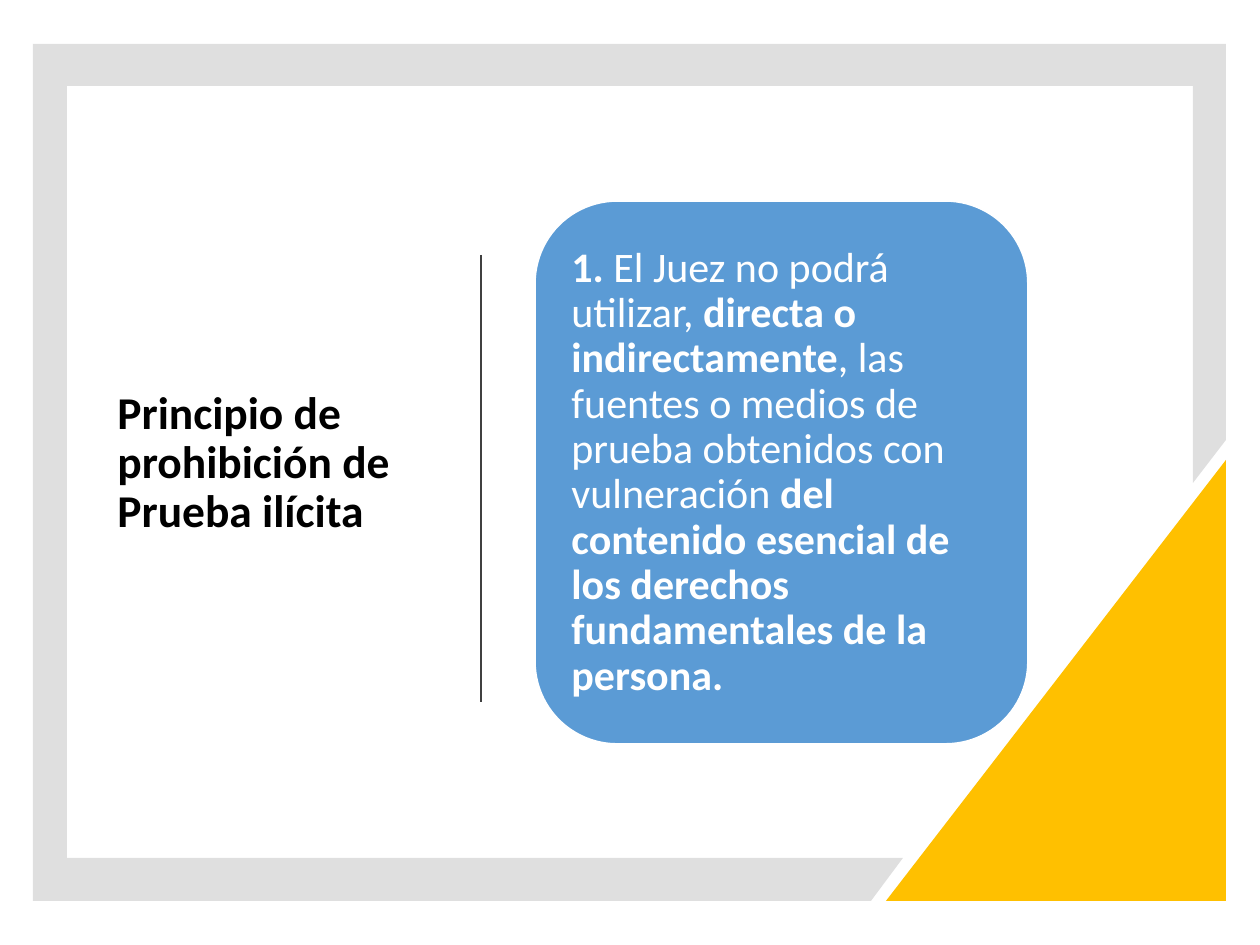
from dataclasses import dataclass

from lxml.etree import SubElement as Sub
from pptx import Presentation as Deck
from pptx.dml.color import RGBColor as Rgb
from pptx.enum.shapes import MSO_CONNECTOR as Link, MSO_SHAPE as Kind
from pptx.enum.text import MSO_ANCHOR as Anchor, PP_ALIGN as Align
from pptx.oxml.ns import qn
from pptx.util import Emu, Pt

UNIT = 914400 / 126


@dataclass(frozen=True)
class Theme:
    font: str = "Calibri"
    head: int = 26
    body: int = 24
    ink: str = "000000"
    paper: str = "FFFFFF"
    grey: str = "808080"
    rule: str = "404040"
    gold: str = "FFC000"
    blue: str = "5B9BD5"


def px(*vals):
    return [Emu(round(v * UNIT)) for v in vals]


class Page:
    def __init__(self, slide, theme):
        self.shapes = slide.shapes
        self.theme = theme

    def paint(self, shape, fill, edge=None):
        shape.shadow.inherit = False
        shape.fill.solid()
        shape.fill.fore_color.rgb = Rgb.from_string(fill)
        if edge:
            shape.line.color.rgb = Rgb.from_string(edge)
            shape.line.width = Pt(1)
        else:
            shape.line.fill.background()

    def frame(self, points, fill, alpha):
        start, *rest = points
        pen = self.shapes.build_freeform(*start, scale=UNIT)
        pen.add_line_segments(rest, close=True)
        shape = pen.convert_to_shape()
        self.paint(shape, fill)
        tint = shape.element.spPr.find(qn("a:solidFill"))[0]
        Sub(tint, qn("a:alpha"), val=str(alpha * 1000))

    def corner(self, box, fill):
        shape = self.shapes.add_shape(Kind.RIGHT_TRIANGLE, *px(*box))
        self.paint(shape, fill)
        shape.element.spPr.find(qn("a:xfrm")).set("flipH", "1")

    def line(self, ends, color, width):
        rule = self.shapes.add_connector(Link.STRAIGHT, *px(*ends))
        rule.line.color.rgb = Rgb.from_string(color)
        rule.line.width = Pt(width)
        Sub(rule.element.spPr, qn("a:effectLst"))

    def label(self, shape, runs, size, color):
        text = shape.text_frame
        text.word_wrap = True
        text.vertical_anchor = Anchor.MIDDLE
        para = text.paragraphs[0]
        para.alignment = Align.LEFT
        para.line_spacing = 0.9
        para.font.name = self.theme.font
        para.font.size = Pt(size)
        para.font.color.rgb = Rgb.from_string(color)
        for words, bold in runs:
            run = para.add_run()
            run.text = words
            run.font.bold = bold
        return text

    def title(self, box, words):
        shape = self.shapes.add_textbox(*px(*box))
        self.label(shape, [(words, True)], self.theme.head, self.theme.ink)

    def card(self, box, runs):
        theme = self.theme
        shape = self.shapes.add_shape(Kind.ROUNDED_RECTANGLE, *px(*box))
        self.paint(shape, theme.blue, theme.paper)
        text = self.label(shape, runs, theme.body, theme.paper)
        text.margin_top = text.margin_bottom = Pt(7.2)


RIM = [
    (33, 44), (1226, 44), (1226, 440), (1193, 483), (1193, 86),
    (67, 86), (67, 858), (903, 858), (871, 901), (33, 901),
]
RULING = [
    ("1.", True),
    (" El Juez no podrá utilizar, ", False),
    ("directa o indirectamente", True),
    (", las fuentes o medios de prueba obtenidos con vulneración ", False),
    ("del contenido esencial de los derechos fundamentales de la persona.", True),
]


def main():
    deck = Deck()
    deck.slide_width, deck.slide_height = px(1260, 945)
    theme = Theme()
    page = Page(deck.slides.add_slide(deck.slide_layouts[6]), theme)
    page.frame(RIM, theme.grey, 25)
    page.corner((886, 460, 340, 441), theme.gold)
    page.title((105, 155, 316, 617), "Principio de prohibición de Prueba ilícita")
    page.line((481, 255, 481, 702), theme.rule, 1.5)
    page.card((535, 201, 493, 543), RULING)
    deck.save("out.pptx")


if __name__ == "__main__":
    main()
